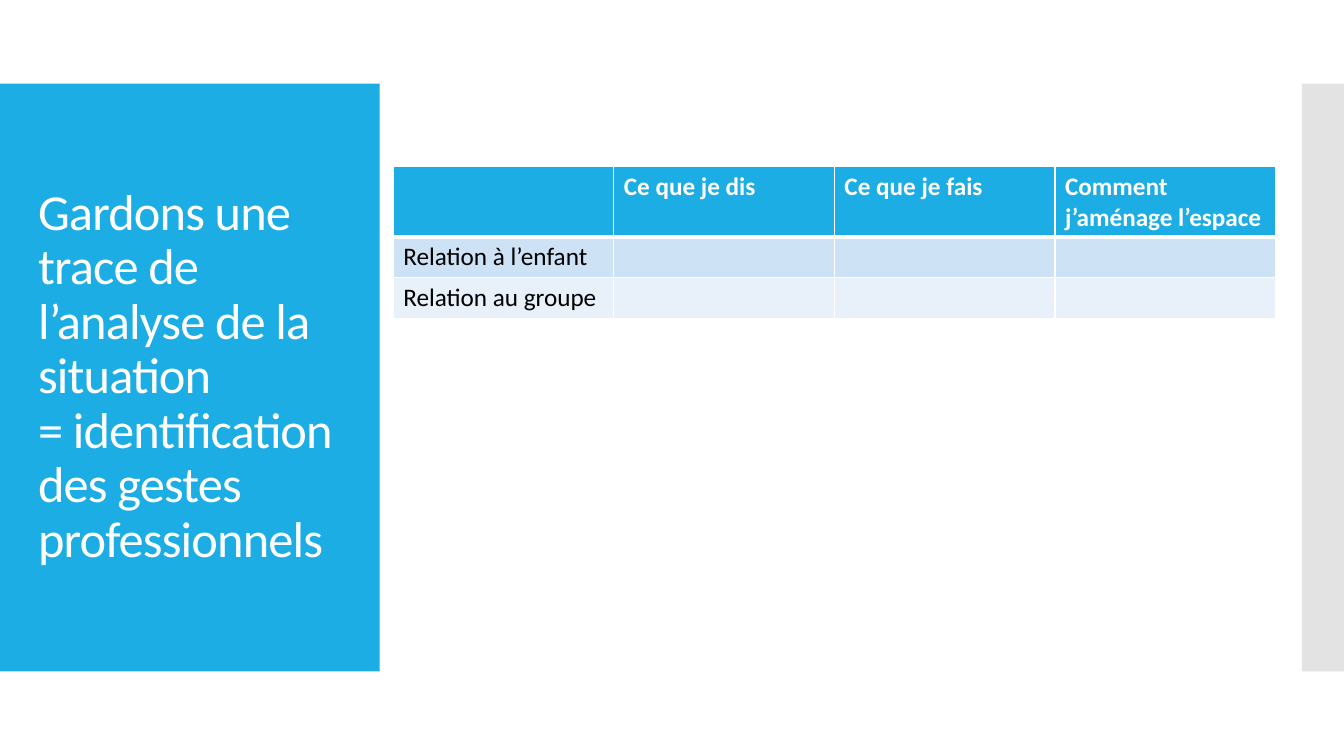
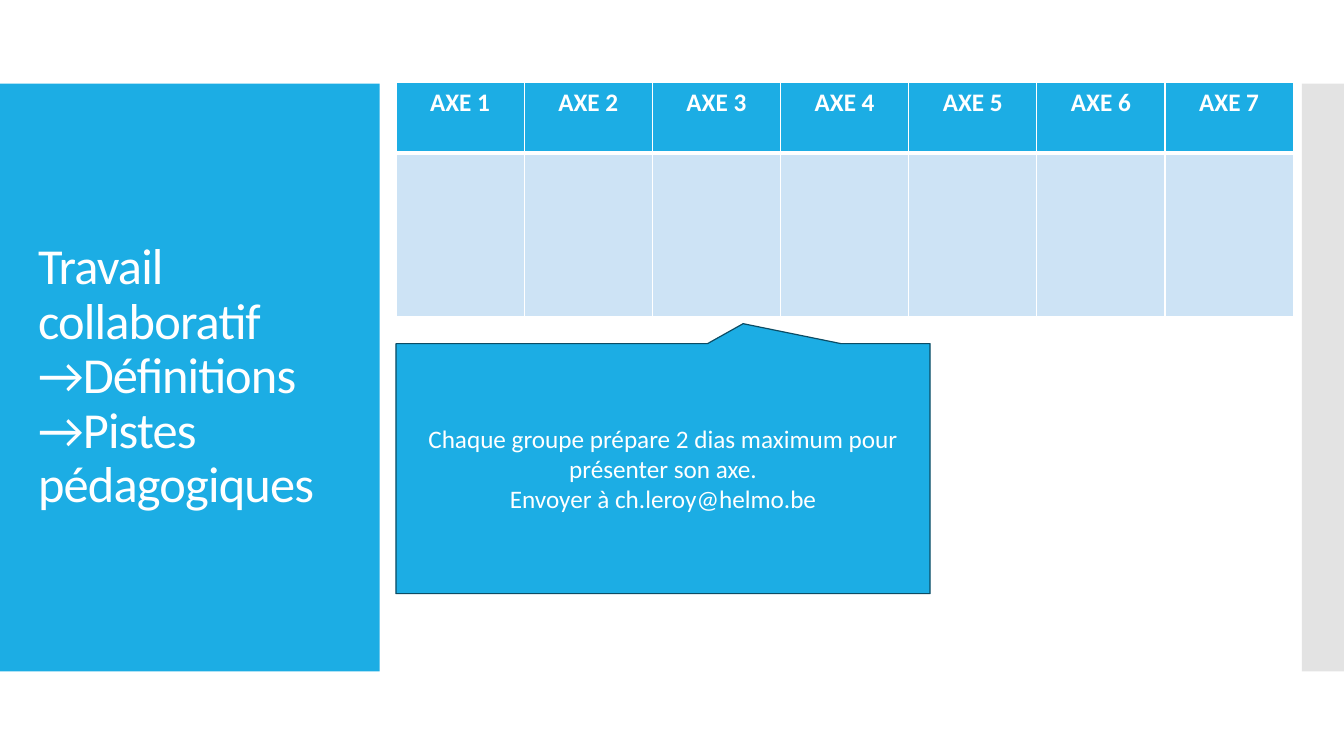
import pptx
import pptx.dml.color
import pptx.enum.shapes
import pptx.enum.text
import pptx.oxml
import pptx.oxml.ns
import pptx.util
from pptx.util import Cm

RGBColor = pptx.dml.color.RGBColor
MSO_SHAPE = pptx.enum.shapes.MSO_SHAPE
PP_ALIGN = pptx.enum.text.PP_ALIGN
MSO_ANCHOR = pptx.enum.text.MSO_ANCHOR

BLUE = RGBColor(0x1C, 0xAD, 0xE4)
DARK_BLUE = RGBColor(0x0C, 0x4C, 0x64)
GREY = RGBColor(0xC8, 0xC8, 0xC8)
WHITE = RGBColor(0xFF, 0xFF, 0xFF)
BLACK = RGBColor(0x00, 0x00, 0x00)
ROW_FILLS = [BLUE, RGBColor(0xCD, 0xE3, 0xF5), RGBColor(0xE8, 0xF1, 0xFA)]

TITLE_FONT = {"name": "Calibri", "size": pptx.util.Pt(36), "bold": False}
BODY_FONT = {"name": "Calibri", "size": pptx.util.Pt(18), "bold": False}
HEADER_FONT = {**BODY_FONT, "bold": True}

BANDS = [
    {"left": 0, "width": 9.57, "color": BLUE},
    {"left": 32.81, "width": 1.06, "color": GREY},
]
BAND_TOP, BAND_HEIGHT = Cm(2.11), Cm(14.81)

SLIDES = [
    {
        "title": "Gardons une trace de l’analyse de la situation \v"
                 "= identification des gestes professionnels",
        "title_width": 8.18,
        "table_at": (9.91, 4.19),
        "column_width": 5.56,
        "row_heights": [1.78, 1.03, 1.03],
        "header_align": PP_ALIGN.LEFT,
        "rows": [
            ["", "Ce que je dis", "Ce que je fais", "Comment j’aménage l’espace"],
            ["Relation à l’enfant", "", "", ""],
            ["Relation au groupe", "", "", ""],
        ],
    },
    {
        "title": "Travail collaboratif\v→Définitions\v→Pistes pédagogiques",
        "title_width": 8.51,
        "table_at": (9.98, 2.08),
        "column_width": 3.23,
        "row_heights": [1.78, 4.13],
        "header_align": PP_ALIGN.CENTER,
        "rows": [[f"AXE {number}" for number in range(1, 8)], [""] * 7],
    },
]


def write_paragraph(paragraph, text, font_values, color, alignment=PP_ALIGN.LEFT):
    paragraph.text = text
    paragraph.alignment = alignment
    for font in [paragraph.font] + [run.font for run in paragraph.runs]:
        for name, value in font_values.items():
            setattr(font, name, value)
        font.color.rgb = color


def set_borders(cell, widths):
    """Give a cell white borders; widths maps a side (L, R, T, B) to points."""
    properties = cell._tc.get_or_add_tcPr()
    for side, width in widths.items():
        properties.append(pptx.oxml.parse_xml(
            f'<a:ln{side} {pptx.oxml.ns.nsdecls("a")} w="{pptx.util.Pt(width)}">'
            f'<a:solidFill><a:srgbClr val="{WHITE}"/></a:solidFill></a:ln{side}>'))


presentation = pptx.Presentation()
presentation.slide_width, presentation.slide_height = Cm(33.87), Cm(19.05)
blank_layout = presentation.slide_layouts[6]

for content in SLIDES:
    slide = presentation.slides.add_slide(blank_layout)

    for band in BANDS:
        shape = slide.shapes.add_shape(
            MSO_SHAPE.RECTANGLE, Cm(band["left"]), BAND_TOP, Cm(band["width"]), BAND_HEIGHT)
        shape.shadow.inherit = False
        shape.fill.solid()
        shape.fill.fore_color.rgb = band["color"]
        shape.line.fill.background()
        if band["color"] == GREY:
            color_element = shape.fill._xPr.find(".//" + pptx.oxml.ns.qn("a:srgbClr"))
            color_element.append(pptx.oxml.parse_xml(
                f'<a:alpha {pptx.oxml.ns.nsdecls("a")} val="50000"/>'))

    title = slide.shapes.add_textbox(
        Cm(0.71), Cm(3.12), Cm(content["title_width"]), Cm(12.78))
    title.text_frame.word_wrap = True
    title.text_frame.vertical_anchor = MSO_ANCHOR.MIDDLE
    paragraph = title.text_frame.paragraphs[0]
    write_paragraph(paragraph, content["title"], TITLE_FONT, WHITE)
    paragraph.line_spacing = 0.9
    for run in paragraph.runs:
        run.font._element.set("spc", "-60")

    rows = content["rows"]
    left, top = content["table_at"]
    table = slide.shapes.add_table(
        len(rows), len(rows[0]), Cm(left), Cm(top),
        Cm(content["column_width"] * len(rows[0])), Cm(sum(content["row_heights"]))).table
    for column in table.columns:
        column.width = Cm(content["column_width"])
    for row_index, row in enumerate(rows):
        table.rows[row_index].height = Cm(content["row_heights"][row_index])
        is_header = row_index == 0
        for column_index, text in enumerate(row):
            cell = table.cell(row_index, column_index)
            set_borders(cell, {"L": 1, "R": 1, "T": 3 if row_index == 1 else 1,
                               "B": 3 if is_header else 1})
            cell.fill.solid()
            cell.fill.fore_color.rgb = ROW_FILLS[row_index]
            write_paragraph(
                cell.text_frame.paragraphs[0], text,
                HEADER_FONT if is_header else BODY_FONT,
                WHITE if is_header else BLACK,
                content["header_align"] if is_header else PP_ALIGN.LEFT)

# The callout belongs to the last slide only.
callout = slide.shapes.add_shape(
    MSO_SHAPE.RECTANGULAR_CALLOUT, Cm(9.98), Cm(8.66), Cm(13.46), Cm(6.3))
callout.adjustments[0], callout.adjustments[1] = 0.15, -0.58
callout.shadow.inherit = False
callout.fill.solid()
callout.fill.fore_color.rgb = BLUE
callout.line.color.rgb = DARK_BLUE
callout.line.width = pptx.util.Pt(0.85)
frame = callout.text_frame
frame.word_wrap = True
frame.vertical_anchor = MSO_ANCHOR.MIDDLE
instructions = ["Chaque groupe prépare 2 dias maximum pour présenter son axe.",
                "Envoyer à ch.leroy@helmo.be"]
for index, text in enumerate(instructions):
    paragraph = frame.add_paragraph() if index else frame.paragraphs[0]
    write_paragraph(paragraph, text, BODY_FONT, WHITE, PP_ALIGN.CENTER)

presentation.save("out.pptx")
